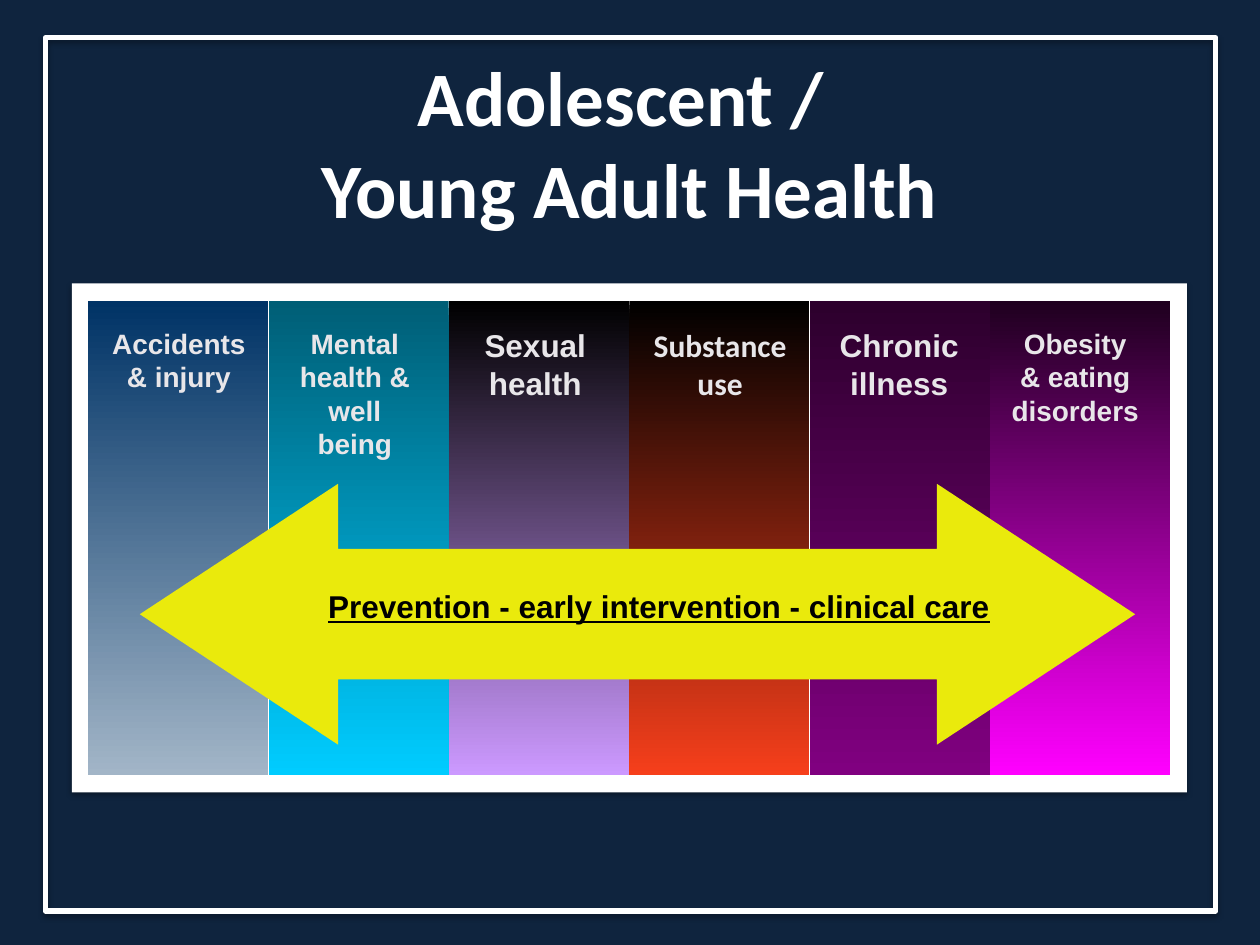
"""Build the adolescent and young adult health slide."""
from lxml.etree import SubElement
from pptx import Presentation
from pptx.dml.color import RGBColor
from pptx.enum.shapes import MSO_SHAPE
from pptx.enum.text import MSO_ANCHOR, PP_ALIGN
from pptx.oxml.ns import qn
from pptx.util import Inches, Pt


def paint(fill, *colors, angle=270, end=1):
    if len(colors) == 1:
        fill.solid()
        fill.fore_color.rgb = RGBColor.from_string(colors[0])
        return
    fill.gradient()
    fill.gradient_angle = angle
    for stop, color, position in zip(fill.gradient_stops, colors, (0, end)):
        stop.color.rgb = RGBColor.from_string(color)
        stop.position = position


def write(text, left, top, width, height, size=18, font="Arial", color="E8E6E9",
          underline=False, anchor=MSO_ANCHOR.TOP):
    box = slide.shapes.add_textbox(*map(Inches, (left, top, width, height)))
    frame = box.text_frame
    frame.word_wrap = True
    frame.vertical_anchor = anchor
    paragraph = frame.paragraphs[0]
    paragraph.text = text
    paragraph.alignment = PP_ALIGN.CENTER
    for run in paragraph.runs:
        run.font.name, run.font.size = font, Pt(size)
        run.font.bold, run.font.underline = True, underline
        run.font.color.rgb = RGBColor.from_string(color)


deck = Presentation()
deck.slide_width, deck.slide_height = Inches(10), Inches(7.5)
slide = deck.slides.add_slide(deck.slide_layouts[6])
paint(slide.background.fill, "0F243E", "102640", angle=90, end=0.19)

border = slide.shapes.add_shape(
    MSO_SHAPE.RECTANGLE, *map(Inches, (0.36, 0.3, 9.29, 6.93)))
border.fill.background()
border.line.color.rgb = RGBColor.from_string("FFFFFF")
border.line.width = Pt(3)

panel = slide.shapes.add_shape(
    MSO_SHAPE.RECTANGLE, *map(Inches, (0.57, 2.25, 8.85, 4.04)))
paint(panel.fill, "FFFFFF")
panel.line.fill.background()

for framed in (border, panel):
    framed.shadow.inherit = False
    effects = framed._element.spPr.find(qn("a:effectLst"))
    shadow = SubElement(effects, qn("a:outerShdw"), blurRad=str(Pt(3.1)),
                        dist=str(Pt(1.8)), dir="5400000", rotWithShape="0")
    shade = SubElement(shadow, qn("a:srgbClr"), val="000000")
    SubElement(shade, qn("a:alpha"), val="35000")

write("Adolescent / \vYoung Adult Health", 0.5, 0.69, 9, 0.87, size=44,
      font="Calibri", color="FFFFFF", anchor=MSO_ANCHOR.MIDDLE)

topics = [
    ("Accidents & injury", "003366", "A2B5C7", 0.03, 1.38, 16, "Arial"),
    ("Mental health & well being", "005E76", "00CCFF", 0.07, 1.23, 16, "Arial"),
    ("Sexual health", "000000", "CC99FF", 0.07, 1.23, 18, "Arial"),
    ("Substance use", "000000", "F63F1B", -0.04, 1.52, 18, "Calibri"),
    ("Chronic illness", "2D002D", "800080", -0.02, 1.46, 18, "Arial"),
    ("Obesity & eating disorders", "1F001F", "FF00FF", 0.06, 1.23, 16, "Arial"),
]
first_left, column_top, column_width, column_height = 0.7, 2.39, 1.43, 3.76
pitch = 8.59 / len(topics)
for column, (topic, dark, bright, inset, width, size, font) in enumerate(topics):
    left = first_left + column * pitch
    band = slide.shapes.add_shape(MSO_SHAPE.RECTANGLE, *map(
        Inches, (left, column_top, column_width, column_height)))
    band.shadow.inherit = False
    paint(band.fill, dark, bright)
    band.line.fill.background()
    write(topic, left + inset, column_top + 0.15, width, 0.65, size=size, font=font)

care_span = slide.shapes.add_shape(
    MSO_SHAPE.LEFT_RIGHT_ARROW, *map(Inches, (1.11, 3.84, 7.9, 2.07)))
care_span.adjustments[0] = 0.5
care_span.adjustments[1] = 0.76
care_span.shadow.inherit = False
paint(care_span.fill, "EAEA0C")
care_span.line.fill.background()
write("Prevention - early intervention - clinical care", 1.9, 4.61, 6.66, 0.46,
      color="000000", underline=True)

deck.save("out.pptx")
